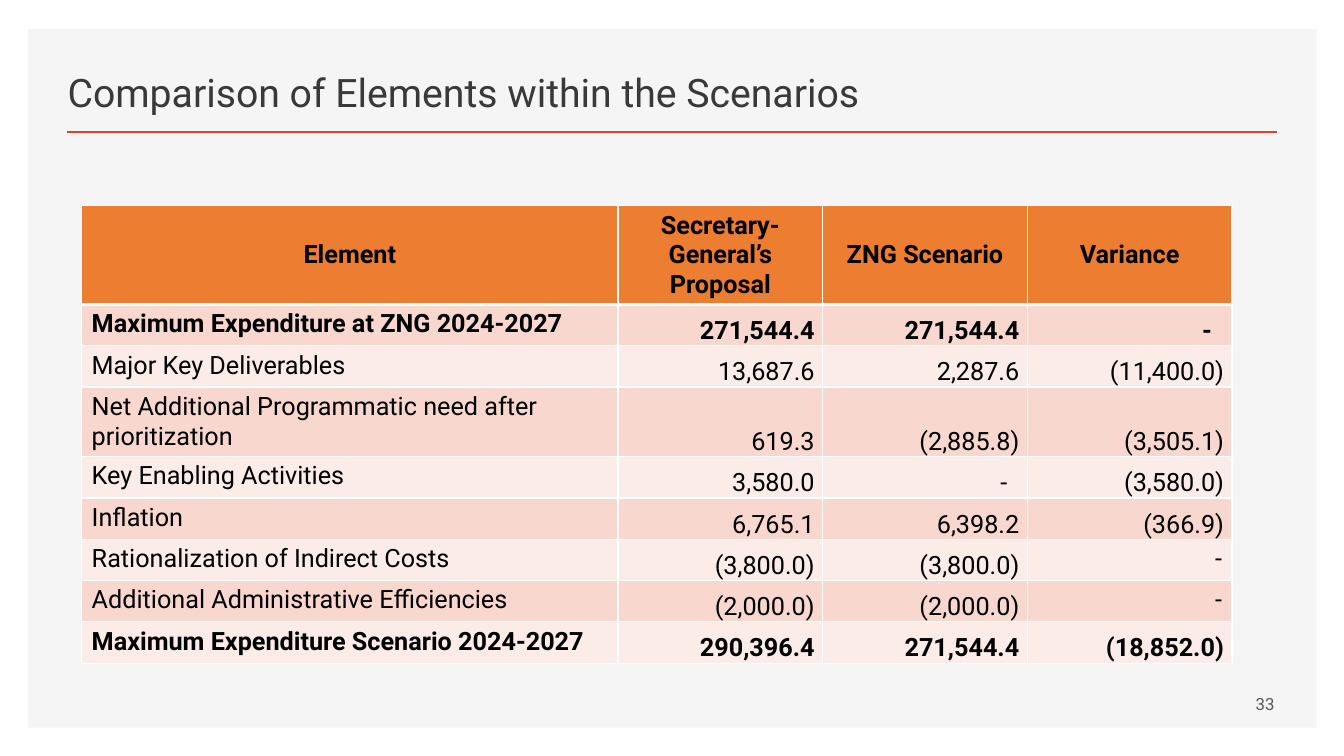
from lxml import etree
from pptx import Presentation
from pptx.dml.color import RGBColor
from pptx.enum import shapes, text
from pptx.oxml import ns
from pptx.util import Inches, Pt


def colour(hex_code):
    return RGBColor.from_string(hex_code)


def add_run(frame, words, size, hex_code, align, bold=False):
    paragraph = frame.paragraphs[0]
    paragraph.alignment = align
    run = paragraph.add_run()
    run.text = words
    run.font.name = "Roboto"
    run.font.size = Pt(size)
    run.font.bold = bold
    run.font.color.rgb = colour(hex_code)


LEFT, CENTER, RIGHT = text.PP_ALIGN.LEFT, text.PP_ALIGN.CENTER, text.PP_ALIGN.RIGHT
TOP, MIDDLE, BOTTOM = (text.MSO_ANCHOR.TOP, text.MSO_ANCHOR.MIDDLE,
                       text.MSO_ANCHOR.BOTTOM)

prs = Presentation()
prs.slide_width, prs.slide_height = Inches(13.33), Inches(7.5)
slide = prs.slides.add_slide(prs.slide_layouts[5])

# Grey panel and rule under the title
panel = slide.shapes.add_shape(shapes.MSO_SHAPE.RECTANGLE, Inches(0.28),
                               Inches(0.29), Inches(12.78), Inches(6.93))
panel.shadow.inherit = False
panel.fill.solid()
panel.fill.fore_color.rgb = colour("F5F5F5")
panel.line.fill.background()

rule = slide.shapes.add_connector(shapes.MSO_CONNECTOR.STRAIGHT, Inches(0.66),
                                  Inches(1.31), Inches(12.67), Inches(1.31))
rule.line.color.rgb = colour("D24726")
rule.line.width = Pt(2)
etree.SubElement(rule.element.spPr, ns.qn("a:effectLst"))

# Title, brought in front of the panel
title = slide.shapes.title
slide.shapes.element.append(title.element)
title.left, title.top = Inches(0.57), Inches(0.49)
title.width, title.height = Inches(9.37), Inches(0.7)
title.text_frame.auto_size = text.MSO_AUTO_SIZE.NONE
title.text_frame.vertical_anchor = BOTTOM
add_run(title.text_frame, "Comparison of Elements within the Scenarios",
        28, "3B3838", LEFT)

# Scenario table
scenarios = [
    ("Element", "Secretary-General’s Proposal", "ZNG Scenario", "Variance"),
    ("Maximum Expenditure at ZNG 2024-2027", "271,544.4", "271,544.4", "-"),
    ("Major Key Deliverables", "13,687.6", "2,287.6", "(11,400.0)"),
    ("Net Additional Programmatic need after prioritization",
     "619.3", "(2,885.8)", "(3,505.1)"),
    ("Key Enabling Activities", "3,580.0", "-", "(3,580.0)"),
    ("Inflation", "6,765.1", "6,398.2", "(366.9)"),
    ("Rationalization of Indirect Costs", "(3,800.0)", "(3,800.0)", "-"),
    ("Additional Administrative Efficiencies", "(2,000.0)", "(2,000.0)", "-"),
    ("Maximum Expenditure Scenario 2024-2027",
     "290,396.4", "271,544.4", "(18,852.0)"),
]
last_row = len(scenarios) - 1
raised_dashes = {(6, 3), (7, 3)}
comparison = slide.shapes.add_table(len(scenarios), 4, Inches(0.81), Inches(2.04),
                                    Inches(11.43), Inches(4.54)).table
for column, width in zip(comparison.columns, (5.32, 2.03, 2.03, 2.03)):
    column.width = Inches(width)

for r, entries in enumerate(scenarios):
    comparison.rows[r].height = Inches({0: 0.97, 3: 0.69}.get(r, 0.41))
    for c, entry in enumerate(entries):
        cell = comparison.cell(r, c)

        # White borders, heavier below the header
        properties = cell._tc.get_or_add_tcPr()
        for side in ("lnL", "lnR", "lnT", "lnB"):
            heavy = (r == 0 and side == "lnB") or (r == 1 and side == "lnT")
            border = etree.SubElement(properties, ns.qn("a:" + side),
                                      w=str(Pt(3 if heavy else 1)))
            border_fill = etree.SubElement(border, ns.qn("a:solidFill"))
            etree.SubElement(border_fill, ns.qn("a:srgbClr"), val="FFFFFF")

        cell.fill.solid()
        cell.fill.fore_color.rgb = colour(
            "ED7D31" if r == 0 else "F8D7CE" if r % 2 else "FCECE8")

        # Headings centred, labels at top left, figures at bottom right
        if r == 0:
            cell.vertical_anchor, align = MIDDLE, CENTER
        elif c == 0:
            cell.vertical_anchor, align = TOP, LEFT
        elif (r, c) in raised_dashes:
            cell.vertical_anchor, align = TOP, RIGHT
        else:
            cell.vertical_anchor, align = BOTTOM, RIGHT
            cell.margin_left = cell.margin_top = Inches(0.01)
            cell.margin_right = Inches(0.2 if entry == "-" else 0.08)
            cell.margin_bottom = 0
        add_run(cell.text_frame, entry, 18, "000000", align,
                bold=r in (0, 1, last_row))

# Page number
page_number = slide.shapes.add_textbox(Inches(9.16), Inches(6.78),
                                       Inches(3.58), Inches(0.4)).text_frame
page_number.word_wrap = True
page_number.vertical_anchor = MIDDLE
add_run(page_number, "33", 12, "595959", RIGHT)

prs.save("out.pptx")
